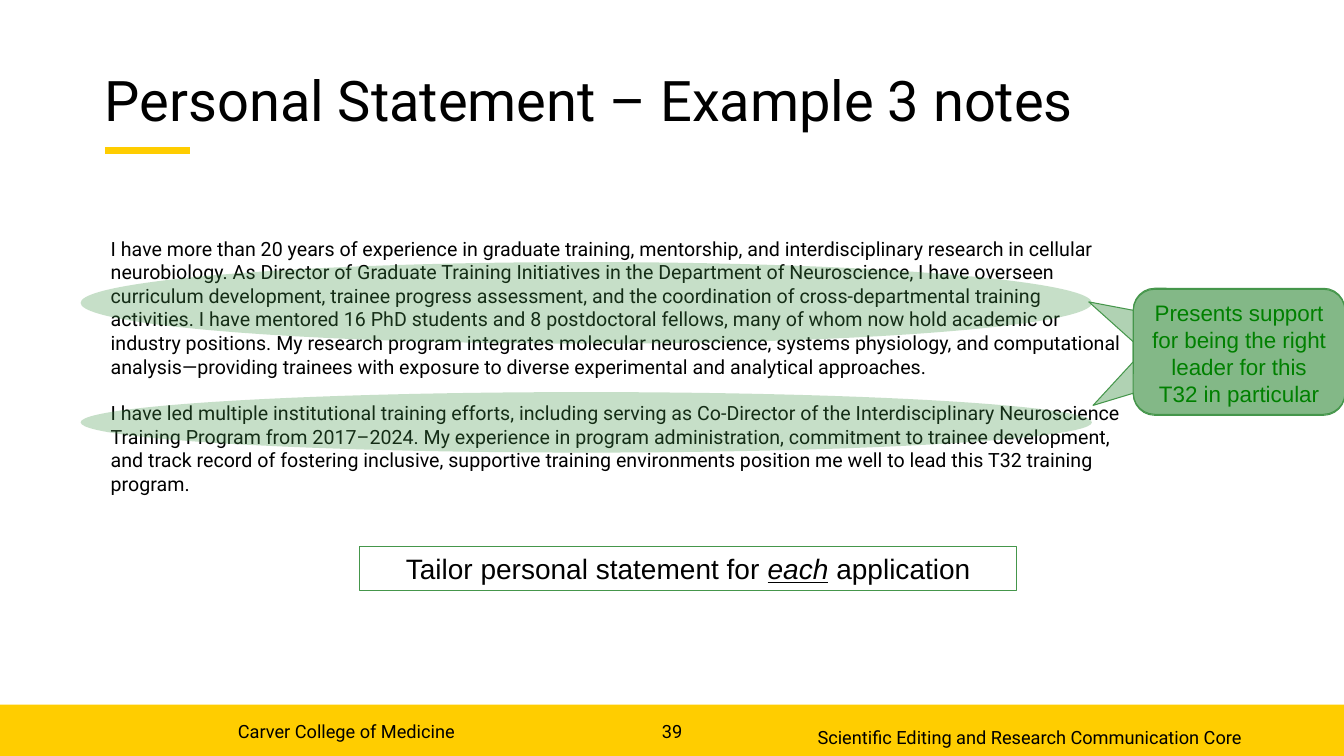
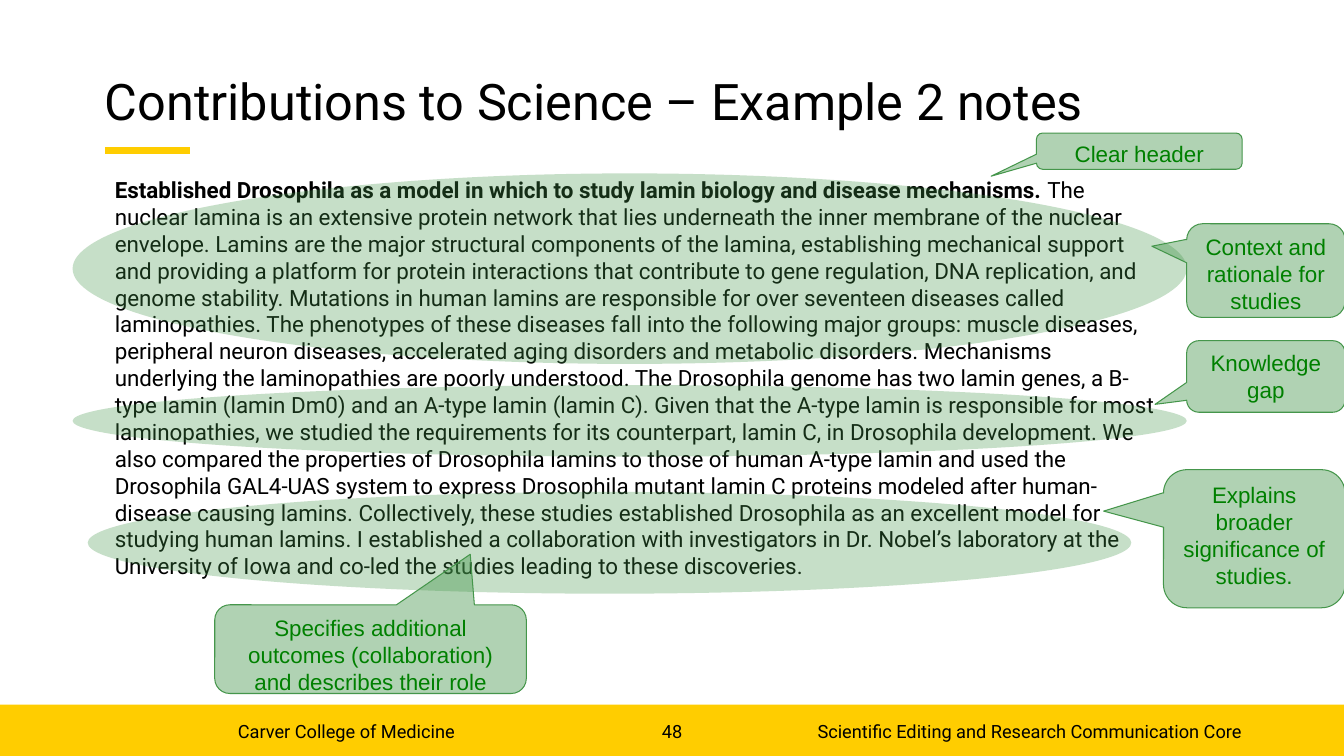
"""Build two annotated example slides for a biosketch writing talk."""
import pptx
import pptx.dml.color
import pptx.enum.shapes
import pptx.enum.text
import pptx.oxml
import pptx.oxml.ns
import pptx.util

Inches = pptx.util.Inches
Pt = pptx.util.Pt
RGBColor = pptx.dml.color.RGBColor
SHAPE = pptx.enum.shapes.MSO_SHAPE
ANCHOR = pptx.enum.text.MSO_ANCHOR
ALIGN = pptx.enum.text.PP_ALIGN

GOLD = RGBColor(0xFF, 0xCD, 0x00)
GREEN = RGBColor(0x45, 0x96, 0x4B)
NOTE_GREEN = RGBColor(0x00, 0x80, 0x00)
BLACK = RGBColor(0, 0, 0)
BODY_FONT = "Roboto"
NOTE_FONT = "Arial"

EXPERIENCE = (
    "I have more than 20 years of experience in graduate training, mentorship, and "
    "interdisciplinary research in cellular neurobiology. As Director of Graduate Training "
    "Initiatives in the Department of Neuroscience, I have overseen curriculum development, "
    "trainee progress assessment, and the coordination of cross-departmental training "
    "activities. I have mentored 16 PhD students and 8 postdoctoral fellows, many of whom now "
    "hold academic or industry positions. My research program integrates molecular "
    "neuroscience, systems physiology, and computational analysis—providing trainees with "
    "exposure to diverse experimental and analytical approaches."
)
LEADERSHIP = (
    "I have led multiple institutional training efforts, including serving as Co‑Director of "
    "the Interdisciplinary Neuroscience Training Program from 2017–2024. My experience in "
    "program administration, commitment to trainee development, and track record of fostering "
    "inclusive, supportive training environments position me well to lead this T32 training "
    "program."
)
LAMIN_HEADER = (
    "Established Drosophila as a model in which to study lamin biology and disease mechanisms. "
)
LAMIN_CONTEXT = (
    "The nuclear lamina is an extensive protein network that lies underneath the inner membrane "
    "of the nuclear envelope. Lamins are the major structural components of the lamina, "
    "establishing mechanical support and providing a platform for protein interactions that "
    "contribute to gene regulation, DNA replication, and genome stability. Mutations in human "
    "lamins are responsible for over seventeen diseases called laminopathies. The phenotypes of "
    "these diseases fall into the following major groups: muscle diseases, peripheral neuron "
    "diseases, accelerated aging disorders and metabolic disorders. "
)
LAMIN_GAP = (
    "Mechanisms underlying the laminopathies are poorly understood. The Drosophila genome has "
    "two lamin genes, a B-type lamin (lamin Dm0) and an A-type lamin (lamin C). Given that the "
    "A-type lamin is responsible for most laminopathies, we studied the requirements for its "
    "counterpart, lamin C, in Drosophila development. "
)
LAMIN_OUTCOME = (
    "We also compared the properties of Drosophila lamins to those of human A-type lamin and "
    "used the Drosophila GAL4-UAS system to express Drosophila mutant lamin C proteins modeled "
    "after human-disease causing lamins. Collectively, these studies established Drosophila as "
    "an excellent model for studying human lamins. I established a collaboration with "
    "investigators in Dr. Nobel’s laboratory at the University of Iowa and co-led the studies "
    "leading to these discoveries."
)


def write(tf, paragraphs, size, font=BODY_FONT, color=BLACK, align=ALIGN.LEFT,
          anchor=ANCHOR.TOP, gap=0, spacing=None, inset=True):
    """Fill a text frame with paragraphs, each a list of (text, styles) runs."""
    tf.word_wrap = True
    tf.vertical_anchor = anchor
    if not inset:
        tf.margin_left = tf.margin_right = tf.margin_top = tf.margin_bottom = 0
    for i, runs in enumerate(paragraphs):
        p = tf.add_paragraph() if i else tf.paragraphs[0]
        p.alignment = align
        p.line_spacing = spacing
        if i and gap:
            p.space_before = Pt(gap)
        for text, *styles in runs:
            r = p.add_run()
            r.text = text
            r.font.size = Pt(size)
            r.font.name = font
            r.font.color.rgb = color
            for style in styles:
                setattr(r.font, style, True)


def add_text(s, at, paragraphs, size, **fmt):
    """Add a text box at (left, top, width, height) and return it."""
    box = s.shapes.add_textbox(*map(Inches, at))
    write(box.text_frame, paragraphs, size, **fmt)
    return box


def outline(sp):
    """Draw the thin green outline."""
    sp.line.color.rgb = GREEN
    sp.line.width = Pt(0.75)


def add_filled(s, kind, at, color, opacity=100):
    """Add a borderless shape with a fill of the given opacity."""
    sp = s.shapes.add_shape(kind, *map(Inches, at))
    sp.shadow.inherit = False
    sp.fill.solid()
    sp.fill.fore_color.rgb = color
    sp.line.fill.background()
    if opacity < 100:
        clr = sp._element.spPr.find(".//" + pptx.oxml.ns.qn("a:srgbClr"))
        clr.append(pptx.oxml.parse_xml(
            f'<a:alpha {pptx.oxml.ns.nsdecls("a")} val="{opacity * 1000}"/>'))
    return sp


def add_highlight(s, at):
    """Add a translucent ellipse over a passage."""
    add_filled(s, SHAPE.OVAL, at, GREEN, 30)


def add_callout(s, at, tip, text=None):
    """Add a callout whose tip is a fraction of its size from its centre."""
    sp = add_filled(s, SHAPE.ROUNDED_RECTANGULAR_CALLOUT, at, GREEN, 42)
    outline(sp)
    for i, value in enumerate((*tip, 0.17)):
        sp.adjustments[i] = value
    if text:
        write(sp.text_frame, [[(text,)]], 16, font=NOTE_FONT, color=NOTE_GREEN,
              align=ALIGN.CENTER)


def add_slide(prs, title, title_size, number, core_top):
    """Add a blank slide with the shared title, accent line and footer."""
    s = prs.slides.add_slide(prs.slide_layouts[6])
    add_filled(s, SHAPE.RECTANGLE, (0, 6.99, 13.33, 0.51), GOLD)
    accent = s.shapes.add_connector(pptx.enum.shapes.MSO_CONNECTOR.STRAIGHT,
                                    *map(Inches, (1.04, 1.49, 1.88, 1.49)))
    accent.line.color.rgb = GOLD
    accent.line.width = Pt(5)
    accent._element.spPr.append(pptx.oxml.parse_xml(
        f'<a:effectLst {pptx.oxml.ns.nsdecls("a")}/>'))
    add_text(s, (1.04, 0.54, 11.22, 0.98), [[(title,)]], title_size,
             anchor=ANCHOR.MIDDLE, spacing=0.9, inset=False)
    add_text(s, (2.36, 7.15, 3.16, 0.35), [[("Carver College of Medicine",)]], 13, inset=False)
    add_text(s, (6.34, 7.15, 0.65, 0.26), [[(str(number),)]], 13,
             align=ALIGN.CENTER, inset=False)
    add_text(s, (7.19, core_top, 5.12, 0.4),
             [[("Scientific Editing and Research Communication Core",)]], 13,
             align=ALIGN.RIGHT, anchor=ANCHOR.MIDDLE, inset=False)
    return s


def add_personal_statement(prs):
    """Add the annotated personal statement."""
    s = add_slide(prs, "Personal Statement – Example 3 notes", 40, 39, 7.11)
    add_text(s, (1, 2.3, 10.23, 2.93), [[(EXPERIENCE,)], [(LEADERSHIP,)]], 14, gap=16.4)
    add_callout(s, (11.24, 2.87, 2.1, 1.25), (-0.71, -0.4))
    advice = add_text(s, (3.57, 5.42, 6.51, 0.44),
                      [[("Tailor personal statement for ",), ("each", "italic", "underline"),
                        (" application",)]],
                      20, font=NOTE_FONT, align=ALIGN.CENTER)
    outline(advice)
    add_callout(s, (11.24, 2.86, 2.1, 1.25), (-0.69, 0.43),
                "Presents support for being the right leader for this T32 in particular")
    for top, height in ((2.6, 0.81), (3.89, 0.6)):
        add_highlight(s, (0.8, top, 10.03, height))


def add_contributions(prs):
    """Add the annotated contribution to science."""
    s = add_slide(prs, "Contributions to Science – Example 2 notes", 36, 48, 7.05)
    studies = LAMIN_CONTEXT + LAMIN_GAP + LAMIN_OUTCOME
    add_text(s, (1.04, 1.7, 10.56, 4.14), [[(LAMIN_HEADER, "bold"), (studies,)]], 16)
    for at in ((0.72, 1.72, 11.05, 1.89), (0.72, 3.82, 11.05, 0.71), (0.87, 4.88, 10.35, 1.01)):
        add_highlight(s, at)
    callouts = (
        ((10.28, 1.32, 2.04, 0.36), (-0.72, 0.69), "Clear header"),
        ((11.77, 2.22, 1.57, 0.93), (-0.72, -0.26), "Context and rationale for studies"),
        ((11.77, 3.38, 1.57, 0.71), (-0.7, 0.39), "Knowledge gap"),
        ((11.54, 4.66, 1.8, 1.37), (-0.83, -0.2), "Explains broader significance of studies."),
        ((2.13, 6, 3.09, 0.88), (0.32, -1.07),
         "Specifies additional outcomes (collaboration) and describes their role"),
    )
    for at, tip, text in callouts:
        add_callout(s, at, tip, text)


def main():
    """Build and save the presentation."""
    prs = pptx.Presentation()
    prs.slide_width = Inches(13.33)
    prs.slide_height = Inches(7.5)
    add_personal_statement(prs)
    add_contributions(prs)
    prs.save("out.pptx")


if __name__ == "__main__":
    main()
